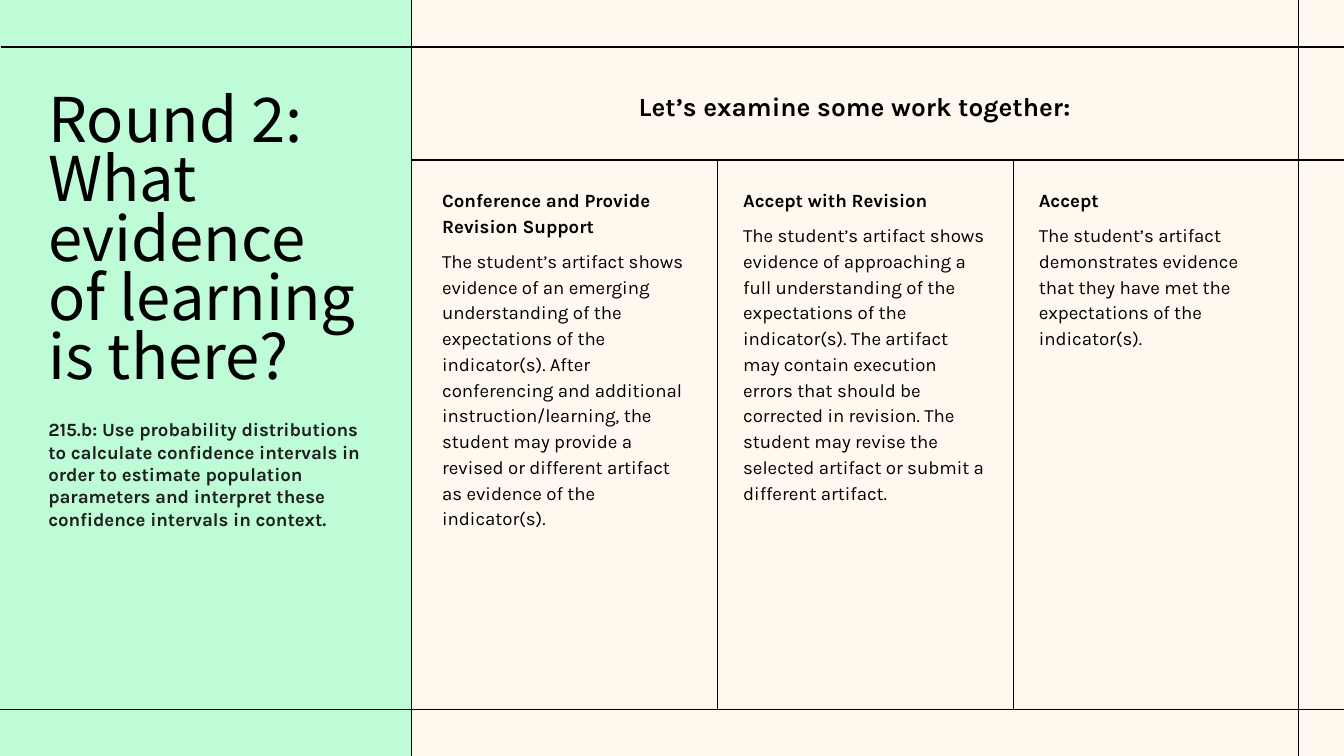
"""Build the slide on evidence of learning with three review outcomes."""
from copy import deepcopy

from lxml import etree
from pptx import Presentation
from pptx.dml.color import RGBColor
from pptx.enum.shapes import MSO_CONNECTOR as CONN, MSO_SHAPE as SHAPE
from pptx.enum.text import MSO_AUTO_SIZE as FIT, PP_ALIGN as ALIGN
from pptx.oxml.ns import qn
from pptx.util import Inches, Pt

W = 10
H = W * 9 / 16
CREAM, MINT, BLACK, GRAY = "FFF8EF", "BDFCD7", "000000", "1F1F1F"
TITLE_FONT, BODY_FONT = "Noto Sans CJK KR", "Karla"
PANEL_W, TOP, HEADER, BOTTOM, RIGHT = 3.06, 0.35, 1.19, 5.28, 9.66
BLEED = 0.01
COL_W, COL_TOP, COL_GAP = 1.82, 1.38, 0.19

TITLE = ["Round 2:", "What evidence of learning is there?"]
STANDARD = (
    "215.b: Use probability distributions to calculate confidence intervals in order "
    "to estimate population parameters and interpret these confidence intervals in context."
)
HEADING = "Let’s examine some work together:"
OUTCOMES = [
    (3.29, 2.56, "Conference and Provide Revision Support",
     "The student’s artifact shows evidence of an emerging understanding of the "
     "expectations of the indicator(s). After conferencing and additional "
     "instruction/learning, the student may provide a revised or different artifact "
     "as evidence of the indicator(s)."),
    (5.53, 2.37, "Accept with Revision",
     "The student’s artifact shows evidence of approaching a full understanding of the "
     "expectations of the indicator(s). The artifact may contain execution errors that "
     "should be corrected in revision. The student may revise the selected artifact or "
     "submit a different artifact."),
    (7.73, 1.21, "Accept",
     "The student’s artifact demonstrates evidence \nthat they have met the "
     "expectations of the indicator(s)."),
]


def rgb(value):
    return RGBColor.from_string(value)


def add_line(s, x1, y1, x2, y2):
    line = s.shapes.add_connector(CONN.STRAIGHT, *map(Inches, (x1, y1, x2, y2)))
    line.line.color.rgb = rgb(BLACK)
    line.line.width = Pt(0.75)
    etree.SubElement(line._element.spPr, qn("a:effectLst"))


def add_box(s, x, y, w, h):
    tf = s.shapes.add_textbox(*map(Inches, (x, y, w, h))).text_frame
    tf.word_wrap = True
    tf.auto_size = FIT.SHAPE_TO_FIT_TEXT
    tf.margin_left = tf.margin_top = tf.margin_right = tf.margin_bottom = 0
    return tf


def add_text(tf, text, size=10, font=BODY_FONT, color=BLACK, bold=False,
             align=ALIGN.LEFT, spacing=1.0, gap=0):
    p = tf.add_paragraph() if tf.text else tf.paragraphs[0]
    p.text = text
    p.alignment = align
    p.line_spacing = spacing
    p.space_before = p.space_after = Pt(gap)
    for r in p.runs:
        r.font.size = Pt(size)
        r.font.name = font
        r.font.bold = bold
        r.font.color.rgb = rgb(color)
    for br in p._p.findall(qn("a:br")):
        br.append(deepcopy(p.runs[0]._r.rPr))


def main():
    prs = Presentation()
    prs.slide_width, prs.slide_height = Inches(W), Inches(H)
    s = prs.slides.add_slide(prs.slide_layouts[6])
    s.background.fill.solid()
    s.background.fill.fore_color.rgb = rgb(CREAM)

    add_line(s, BLEED, HEADER, W + 2 * BLEED, HEADER)
    add_text(add_box(s, 3.41, 0.67, 5.9, 0.24), HEADING, size=14, bold=True,
             align=ALIGN.CENTER)

    panel = s.shapes.add_shape(SHAPE.RECTANGLE, 0, 0, Inches(PANEL_W), Inches(H))
    panel.shadow.inherit = False
    panel.fill.solid()
    panel.fill.fore_color.rgb = rgb(MINT)
    panel.line.fill.background()

    add_line(s, RIGHT, -BLEED, RIGHT, H + BLEED)
    add_line(s, -2 * BLEED, BOTTOM, W + 2 * BLEED, BOTTOM)
    add_line(s, PANEL_W, -BLEED, PANEL_W, H + BLEED)
    add_line(s, BLEED, TOP, W + 2 * BLEED, TOP)

    tf = add_box(s, 0.36, 0.71, 2.37, 2.22)
    for text in TITLE:
        add_text(tf, text, size=33, font=TITLE_FONT, spacing=0.8)
    add_text(add_box(s, 0.36, 3.11, 2.37, 0.84), STANDARD, color=GRAY, bold=True)

    for i, (x, h, name, detail) in enumerate(OUTCOMES):
        if i:
            add_line(s, x - COL_GAP, HEADER, x - COL_GAP, BOTTOM)
        tf = add_box(s, x, COL_TOP, COL_W, h)
        add_text(tf, name, bold=True, spacing=1.15)
        add_text(tf, detail, spacing=1.15, gap=5)

    prs.save("out.pptx")


if __name__ == "__main__":
    main()
